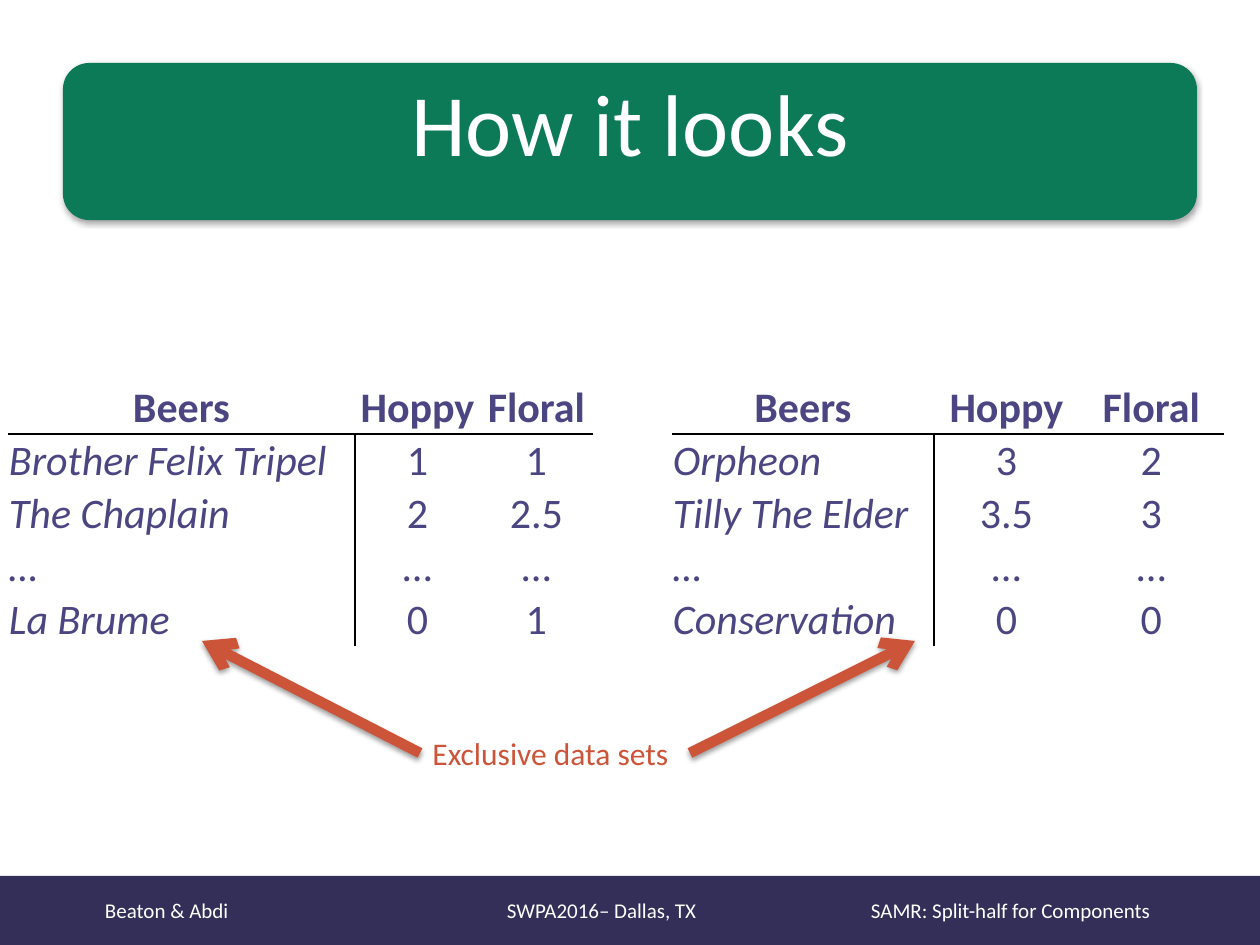
from lxml import etree
from pptx import Presentation
from pptx.dml.color import RGBColor
from pptx.enum.shapes import MSO_CONNECTOR, MSO_SHAPE
from pptx.enum.text import MSO_ANCHOR, PP_ALIGN
from pptx.oxml import parse_xml
from pptx.oxml.ns import nsdecls, qn
from pptx.util import Emu, Pt

PX = 914400 // 126
GREEN, NAVY, PURPLE, RUST = "0C7A57", "342F59", "4B4582", "CC5439"
WHITE, BLACK = "FFFFFF", "000000"
PLAIN_TABLE_STYLE = "{2D5ABB26-0587-4C30-8999-92F81FD0307C}"


def px(length):
    return Emu(length * PX)


def color(hex_string):
    return RGBColor.from_string(hex_string)


def write_text(frame, text, size, hex_color, align=PP_ALIGN.LEFT, bold=False, italic=False):
    paragraph = frame.paragraphs[0]
    paragraph.alignment = align
    run = paragraph.add_run()
    run.text = text
    run.font.name = "Calibri"
    run.font.size = Pt(size)
    run.font.bold = bold
    run.font.italic = italic
    run.font.color.rgb = color(hex_color)
    return paragraph


def add_shadow(shape, distance, opacity):
    properties = shape._element.spPr
    for effects in properties.findall(qn("a:effectLst")):
        properties.remove(effects)
    properties.append(parse_xml(
        f'<a:effectLst {nsdecls("a")}><a:outerShdw blurRad="{Pt(3.1)}" dist="{Pt(distance)}" '
        f'dir="5400000" rotWithShape="0"><a:srgbClr val="{BLACK}">'
        f'<a:alpha val="{opacity * 1000}"/></a:srgbClr></a:outerShdw></a:effectLst>'))


def add_bar(slide, kind, box, fill):
    shape = slide.shapes.add_shape(kind, *map(px, box))
    shape.shadow.inherit = False
    shape.fill.solid()
    shape.fill.fore_color.rgb = color(fill)
    shape.line.fill.background()
    return shape


def add_title(slide, box, text):
    add_shadow(add_bar(slide, MSO_SHAPE.ROUNDED_RECTANGLE, box, GREEN), 1.8, 35)
    title = slide.shapes.add_textbox(*map(px, box))
    title.text_frame.word_wrap = True
    write_text(title.text_frame, text, 50, WHITE, align=PP_ALIGN.CENTER)


def add_footer(slide, box, parts, starts):
    shape = add_bar(slide, MSO_SHAPE.RECTANGLE, box, NAVY)
    frame = shape.text_frame
    frame.vertical_anchor = MSO_ANCHOR.MIDDLE
    frame.margin_left = px(starts[0])
    frame.margin_right = 0
    paragraph = write_text(frame, "\t".join(parts), 12, WHITE)
    tabs = etree.SubElement(paragraph._p.get_or_add_pPr(), qn("a:tabLst"))
    for start in starts[1:]:
        etree.SubElement(tabs, qn("a:tab"), pos=str(px(start - starts[0])), algn="l")


def add_borders(cell, visible_sides):
    solid = f'<a:solidFill><a:srgbClr val="{BLACK}"/></a:solidFill>'
    for side in "LRTB":
        paint = solid if side in visible_sides else "<a:noFill/>"
        cell._tc.get_or_add_tcPr().append(parse_xml(
            f'<a:ln{side} {nsdecls("a")} w="{Pt(1)}">{paint}</a:ln{side}>'))


def add_ratings(slide, left, top, widths, rows, row_height=53):
    rows = [("Beers", "Hoppy", "Floral"), *rows]
    frame = slide.shapes.add_table(
        len(rows), len(widths), px(left), px(top), px(sum(widths)), px(row_height * len(rows)))
    table = frame.table
    table.first_row = table.horz_banding = False
    table._tbl.tblPr.find(qn("a:tableStyleId")).text = PLAIN_TABLE_STYLE
    for column, width in zip(table.columns, widths):
        column.width = px(width)
    for row_index, values in enumerate(rows):
        table.rows[row_index].height = px(row_height)
        header = row_index == 0
        for column_index, value in enumerate(values):
            name = column_index == 0 and not header
            cell = table.cell(row_index, column_index)
            cell.margin_left = cell.margin_right = cell.margin_top = px(1)
            cell.margin_bottom = 0
            cell.vertical_anchor = MSO_ANCHOR.BOTTOM
            sides = "B" if header else ("R", "L", "")[column_index]
            add_borders(cell, sides + ("T" if row_index == 1 else ""))
            cell.fill.background()
            write_text(cell.text_frame, value, 24, PURPLE, bold=header, italic=name,
                       align=PP_ALIGN.LEFT if name else PP_ALIGN.CENTER)


def add_callout(slide, box, text, targets):
    left, top, width, height = box
    label = slide.shapes.add_textbox(*map(px, box))
    label.text_frame.word_wrap = False
    write_text(label.text_frame, text, 18, RUST)
    for site, (end_x, end_y) in targets.items():
        start_x = left if site == 1 else left + width
        arrow = slide.shapes.add_connector(
            MSO_CONNECTOR.STRAIGHT, px(start_x), px(top + height // 2),
            px(left + end_x), px(top + end_y))
        arrow.begin_connect(label, site)
        arrow.line.color.rgb = color(RUST)
        arrow.line.width = Pt(6)
        etree.SubElement(arrow.line._get_or_add_ln(), qn("a:tailEnd"), type="arrow")
        add_shadow(arrow, 1.6, 38)


def main():
    presentation = Presentation()
    presentation.slide_width, presentation.slide_height = px(1260), px(945)
    slide = presentation.slides.add_slide(presentation.slide_layouts[6])
    add_title(slide, (63, 63, 1134, 157), "How it looks")
    add_footer(slide, (0, 876, 1260, 69),
               ("Beaton & Abdi", "SWPA2016– Dallas, TX", "SAMR: Split-half for Components"),
               (105, 507, 871))
    add_ratings(slide, 8, 381, (347, 125, 113), [
        ("Brother Felix Tripel", "1", "1"),
        ("The Chaplain", "2", "2.5"),
        ("…", "…", "…"),
        ("La Brume", "0", "1"),
    ])
    add_ratings(slide, 672, 381, (262, 145, 145), [
        ("Orpheon", "3", "2"),
        ("Tilly The Elder", "3.5", "3"),
        ("…", "…", "…"),
        ("Conservation", "0", "0"),
    ])
    add_callout(slide, (420, 728, 270, 50), "Exclusive data sets",
                {3: (495, -87), 1: (-218, -87)})
    presentation.save("out.pptx")


if __name__ == "__main__":
    main()
